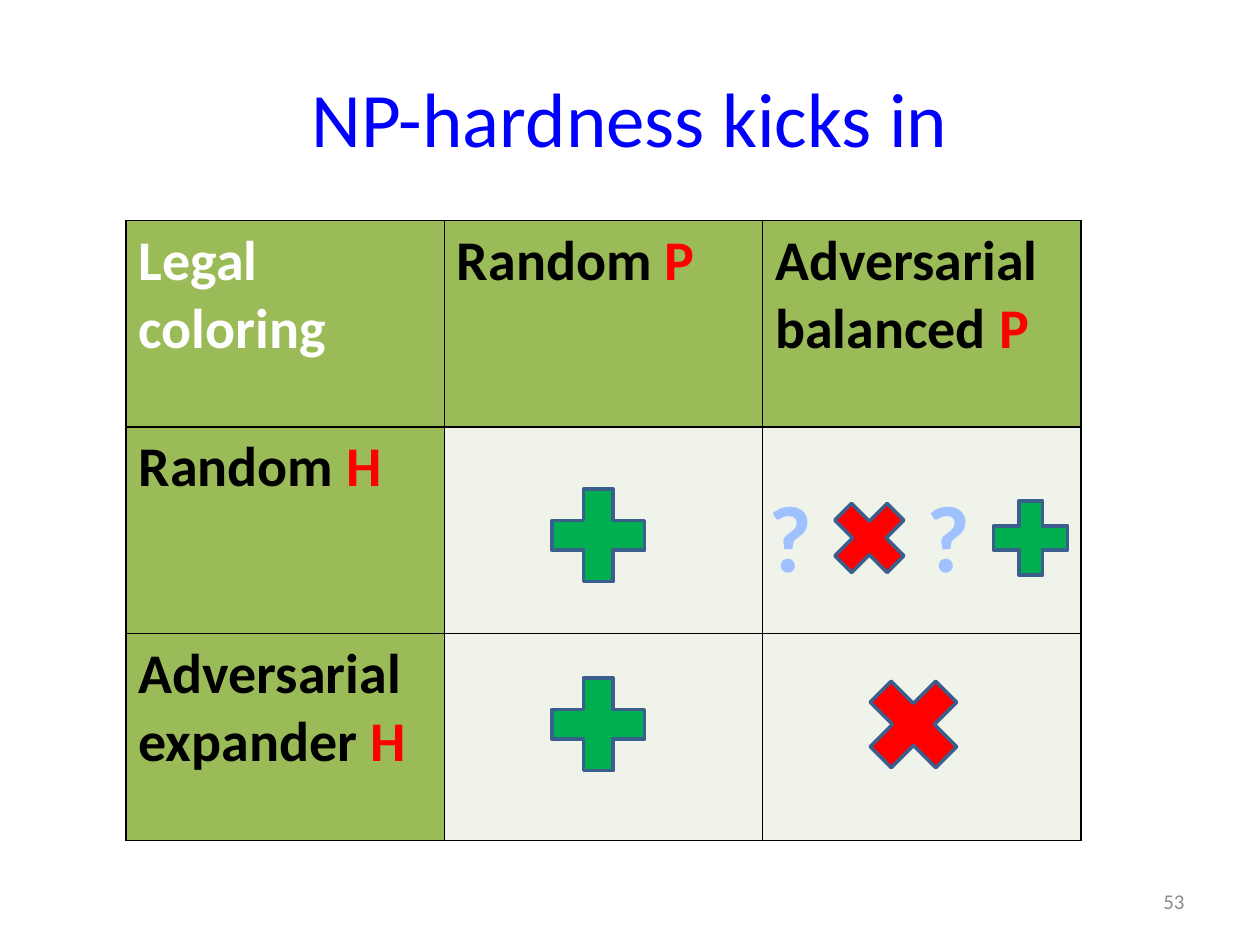
from typing import NamedTuple

from lxml import etree
from pptx import Presentation
from pptx.dml.color import RGBColor
from pptx.enum import shapes, text
from pptx.oxml import ns
from pptx.util import Inches, Pt

FONT = "Calibri"
INK = {
    "title": "0000FF", "page": "8C8C8C", "head": "9BBB59", "body": "EFF3EA",
    "white": "FFFFFF", "black": "000000", "red": "FF0000", "green": "00B050",
    "edge": "3A5F8C", "query": "A0C1FF",
}
PLUS = shapes.MSO_SHAPE.MATH_PLUS
CROSS = shapes.MSO_SHAPE.MATH_MULTIPLY


class Mark(NamedTuple):
    kind: shapes.MSO_SHAPE
    left: float
    top: float
    size: float
    ink: str


class Label(NamedTuple):
    words: str
    symbol: str = ""
    ink: str = "black"


MARKS = [
    Mark(PLUS, 4.25, 3.75, 1, "green"),
    Mark(PLUS, 4.25, 5.25, 1, "green"),
    Mark(CROSS, 6.75, 5.25, 1, "red"),
    Mark(CROSS, 6.5, 3.87, 0.8, "red"),
    Mark(PLUS, 7.78, 3.87, 0.8, "green"),
]
LABELS = {
    (0, 0): Label("Legal coloring", ink="white"),
    (0, 1): Label("Random ", "P"),
    (0, 2): Label("Adversarial balanced ", "P"),
    (1, 0): Label("Random ", "H"),
    (2, 0): Label("Adversarial expander ", "H"),
}


def color(name: str) -> RGBColor:
    return RGBColor.from_string(INK[name])


def style(para, size: float, ink: str = "black", bold: bool = False,
          align=None) -> None:
    font = para.font
    font.name, font.size, font.bold = FONT, Pt(size), bold
    font.color.rgb = color(ink)
    para.alignment = align


def add_text(slide, words: str, box: tuple, wrap: bool = True):
    """Add a middle-anchored text box and return its paragraph."""
    frame = slide.shapes.add_textbox(*map(Inches, box)).text_frame
    frame.word_wrap = wrap
    frame.vertical_anchor = text.MSO_ANCHOR.MIDDLE
    frame.text = words
    return frame.paragraphs[0]


def add_border(cell) -> None:
    props = cell._tc.get_or_add_tcPr()
    for side in ("lnL", "lnR", "lnT", "lnB"):
        line = etree.SubElement(props, ns.qn(f"a:{side}"), w=str(Pt(1)))
        fill = etree.SubElement(line, ns.qn("a:solidFill"))
        etree.SubElement(fill, ns.qn("a:srgbClr"), val=INK["black"])


def add_label(cell, label: Label) -> None:
    para = cell.text_frame.paragraphs[0]
    style(para, 32, bold=True)
    for words, ink in ((label.words, label.ink), (label.symbol, "red")):
        if words:
            run = para.add_run()
            run.text = words
            run.font.color.rgb = color(ink)
            run.font.bold = True


def add_grid(slide) -> None:
    table = slide.shapes.add_table(
        3, 3, Inches(1), Inches(1.75), Inches(7.58), Inches(4.92)).table
    for row in range(3):
        for col in range(3):
            cell = table.cell(row, col)
            add_border(cell)
            cell.fill.solid()
            label = LABELS.get((row, col))
            cell.fill.fore_color.rgb = color("head" if label else "body")
            if label:
                add_label(cell, label)


def add_mark(slide, mark: Mark) -> None:
    size = Inches(mark.size)
    shape = slide.shapes.add_shape(
        mark.kind, Inches(mark.left), Inches(mark.top), size, size)
    shape.shadow.inherit = False
    shape.fill.solid()
    shape.fill.fore_color.rgb = color(mark.ink)
    shape.line.color.rgb = color("edge")
    shape.line.width = Pt(2)


def main() -> None:
    deck = Presentation()
    deck.slide_width, deck.slide_height = Inches(10), Inches(7.5)
    slide = deck.slides.add_slide(deck.slide_layouts[5])

    title = slide.shapes.title
    title.left, title.top = Inches(0.5), Inches(0.3)
    title.width, title.height = Inches(9), Inches(1.25)
    title.text = "NP-hardness kicks in"
    center = text.PP_ALIGN.CENTER
    style(title.text_frame.paragraphs[0], 44, "title", align=center)

    page = add_text(slide, "53", (7.17, 6.95, 2.33, 0.4))
    style(page, 12, "page", align=text.PP_ALIGN.RIGHT)

    add_grid(slide)
    for mark in MARKS:
        add_mark(slide, mark)
    for left in (7.25, 6):
        query = add_text(slide, "?", (left, 3.74, 0.55, 1.01), wrap=False)
        style(query, 54, "query", bold=True, align=center)

    deck.save("out.pptx")


if __name__ == "__main__":
    main()
